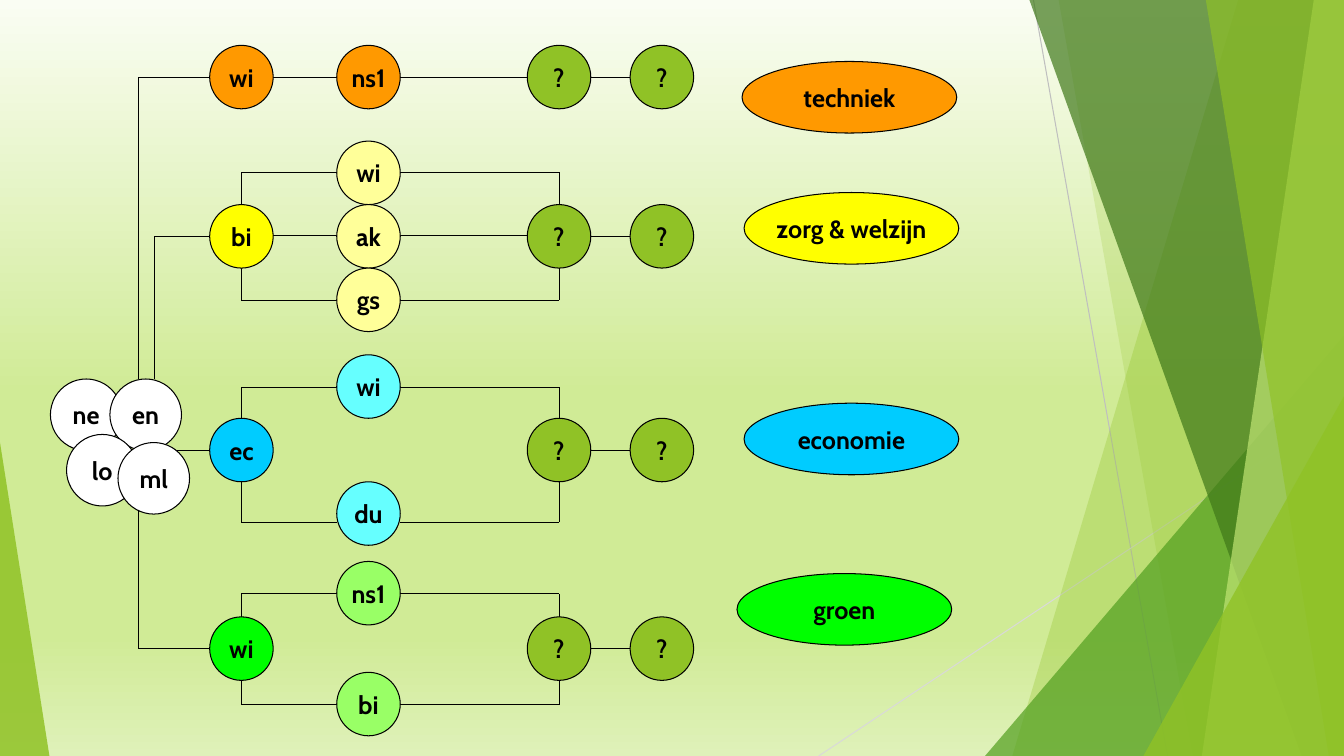
from copy import deepcopy

from lxml import etree
from pptx import Presentation
from pptx.dml.color import RGBColor
from pptx.enum.shapes import MSO_CONNECTOR, MSO_SHAPE
from pptx.enum.text import MSO_ANCHOR, PP_ALIGN
from pptx.oxml.ns import qn
from pptx.util import Inches, Pt

OVAL = MSO_SHAPE.OVAL
STRAIGHT = MSO_CONNECTOR.STRAIGHT
MIDDLE = MSO_ANCHOR.MIDDLE
CENTER = PP_ALIGN.CENTER
rgb = RGBColor.from_string

deck = Presentation()
deck.slide_width, deck.slide_height = Inches(13.33), Inches(7.5)
page = deck.slides.add_slide(deck.slide_layouts[6])


def add_wire(x1, y1, x2, y2, color="000000"):
    wire = page.shapes.add_connector(
        STRAIGHT, Inches(x1), Inches(y1), Inches(x2), Inches(y2))
    wire.line.color.rgb = rgb(color)
    wire.line.width = Pt(0.75)
    etree.SubElement(wire._element.spPr, qn("a:effectLst"))


def add_oval(text, left, top, width, height, color):
    oval = page.shapes.add_shape(
        OVAL, Inches(left), Inches(top), Inches(width), Inches(height))
    oval.shadow.inherit = False
    oval.fill.solid()
    oval.fill.fore_color.rgb = rgb(color)
    oval.line.color.rgb = rgb("000000")
    oval.line.width = Pt(0.75)
    frame = oval.text_frame
    frame.word_wrap = False
    frame.vertical_anchor = MIDDLE
    para = frame.paragraphs[0]
    para.alignment = CENTER
    span = para.add_run()
    span.text = text
    span.font.name = "Cabin"
    span.font.size = Pt(18)
    span.font.bold = True
    span.font.color.rgb = rgb("000000")


# Background gradient, top to bottom
backdrop = page.background.fill
backdrop.gradient()
backdrop.gradient_angle = 270
stop_list = backdrop.gradient_stops[0]._gs.getparent()
for _ in range(2):
    stop_list.append(deepcopy(stop_list[0]))
gradient = [(0, "FAFDF3"), (0.52, "D0EB96"), (0.84, "D0EB96"), (1, "DFF1B9")]
for stop, (position, color) in zip(backdrop.gradient_stops, gradient):
    stop.position = position
    stop.color.rgb = rgb(color)

# Decorative facets: colour, opacity in percent, corners
add_wire(10.25, 0, 11.58, 7.5, "BFBFBF")
add_wire(13.33, 4.03, 8.12, 7.5, "D9D9D9")
right_edge = [(13.33, 0), (13.33, 7.5)]
facets = [
    ("90C226", 30, [(12.28, 0), *right_edge, (10.04, 7.5)]),
    ("90C226", 20, [(10.5, 0), *right_edge, (11.83, 7.5)]),
    ("54A021", 72, [(13.33, 3.33), (13.33, 7.5), (9.77, 7.5)]),
    ("3F7819", 70, [(10.21, 0), *right_edge, (12.91, 7.5)]),
    ("C0E474", 70, [(13.03, 0), *right_edge, (11.92, 7.5)]),
    ("90C226", 65, [(11.96, 0), *right_edge, (13.18, 7.5)]),
    ("90C226", 80, [(13.33, 3.93), (13.33, 7.5), (11.34, 7.5)]),
    ("90C226", 85, [(0, 4.39), (0.49, 7.5), (0, 7.5)]),
]
for color, opacity, corners in facets:
    points = [(Inches(x), Inches(y)) for x, y in corners]
    builder = page.shapes.build_freeform(*points[0])
    builder.add_line_segments(points[1:])
    facet = builder.convert_to_shape()
    facet.shadow.inherit = False
    facet.line.fill.background()
    facet.fill.solid()
    facet.fill.fore_color.rgb = rgb(color)
    color_node = facet._element.spPr.find(".//" + qn("a:srgbClr"))
    etree.SubElement(color_node, qn("a:alpha"), val=str(opacity * 1000))

# Columns of the diagram
SIZE = 0.63
HALF = SIZE / 2
START, OPTION, CHOICE, LAST = 2.08, 3.34, 5.23, 6.25
CHOICE_COLOR = "90C226"

# Sectors: top, subject, colour, trunk x, trunk y, option colour,
# options (name, top, wire y), label, label left, label top
sectors = [
    (0.45, "wi", "FF9900", 1.37, 3.76, "FF9900",
     [("ns1", 0.45, 0.77)], "techniek", 7.36, 0.61),
    (2.03, "bi", "FFFF00", 1.53, 3.76, "FFFF99",
     [("wi", 1.4, 1.71), ("ak", 2.03, 2.34), ("gs", 2.66, 2.98)],
     "zorg & welzijn", 7.38, 1.91),
    (4.15, "ec", "00CCFF", 1.53, 4.47, "66FFFF",
     [("wi", 3.52, 3.84), ("du", 4.78, 5.18)], "economie", 7.38, 4),
    (6.12, "wi", "00FF00", 1.37, 4.47, "99FF66",
     [("ns1", 5.57, 5.89), ("bi", 6.67, 6.99)], "groen", 7.31, 5.69),
]
for (top, subject, color, trunk_x, trunk_y, option_color,
     options, label, label_left, label_top) in sectors:
    middle = top + HALF

    # Wires from the core to the start, and between the choices
    if abs(trunk_y - middle) > HALF:
        add_wire(trunk_x, trunk_y, trunk_x, middle)
    add_wire(trunk_x, middle, START, middle)
    add_wire(CHOICE + SIZE, middle, LAST, middle)

    # Options, wired straight or around the corner
    for name, option_top, wire_y in options:
        wire_start, wire_end = START + SIZE, CHOICE
        if option_top != top:
            wire_start, wire_end = START + HALF, CHOICE + HALF
            edge = top if wire_y < top else top + SIZE
            add_wire(wire_start, edge, wire_start, wire_y)
            add_wire(wire_end, edge, wire_end, wire_y)
        add_wire(wire_start, wire_y, OPTION, wire_y)
        add_wire(OPTION + SIZE, wire_y, wire_end, wire_y)
        add_oval(name, OPTION, option_top, SIZE, SIZE, option_color)

    add_oval(subject, START, top, SIZE, SIZE, color)
    for left in (CHOICE, LAST):
        add_oval("?", left, top, SIZE, SIZE, CHOICE_COLOR)
    add_oval(label, label_left, label_top, 2.13, 0.71, color)

# Core subjects, overlapping
for name, left, top in [("ne", 0.5, 3.76), ("en", 1.09, 3.76),
                        ("lo", 0.66, 4.31), ("ml", 1.17, 4.39)]:
    add_oval(name, left, top, 0.71, 0.71, "FFFFFF")

deck.save("out.pptx")
